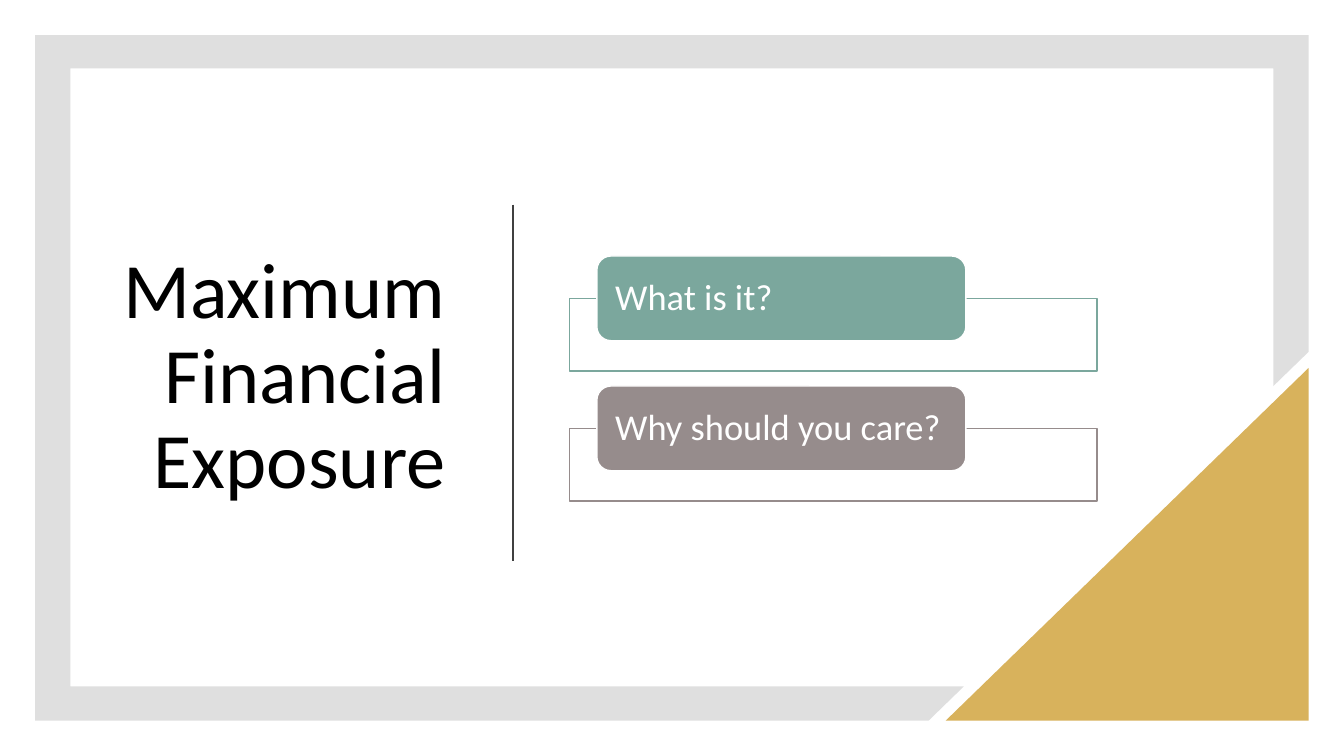
from lxml.etree import SubElement
from pptx import Presentation
from pptx.dml.color import RGBColor
from pptx.enum.shapes import MSO_CONNECTOR, MSO_SHAPE
from pptx.enum.text import MSO_ANCHOR, MSO_AUTO_SIZE, PP_ALIGN
from pptx.oxml.ns import qn
from pptx.util import Inches, Pt

WHITE = RGBColor(0xFF, 0xFF, 0xFF)
BLACK = RGBColor(0x00, 0x00, 0x00)
GRAY = RGBColor(0x80, 0x80, 0x80)
DARK = RGBColor(0x40, 0x40, 0x40)
GOLD = RGBColor(0xD8, 0xB2, 0x5C)
GREEN = RGBColor(0x7B, 0xA7, 0x9D)
TAUPE = RGBColor(0x96, 0x8C, 0x8C)

FRAME = [(0.35, 0.35), (12.98, 0.35), (12.98, 3.49), (12.63, 3.83),
         (12.63, 0.68), (0.7, 0.68), (0.7, 6.81), (9.56, 6.81),
         (9.21, 7.15), (0.35, 7.15)]
TOPICS = [("What is it?", GREEN), ("Why should you care?", TAUPE)]
TOP, STEP = 2.54, 1.29


class Board:
    font = "Calibri"

    def __init__(self, slide):
        self.slide = slide
        self.shapes = slide.shapes

    def paint(self, shape, fill, line=None, alpha=100):
        """Set fill, its opacity in percent, and outline."""
        shape.shadow.inherit = False
        shape.fill.solid()
        shape.fill.fore_color.rgb = fill
        if alpha < 100:
            color = shape.element.spPr.find(qn("a:solidFill"))[0]
            SubElement(color, qn("a:alpha"), val=str(alpha * 1000))
        if line is None:
            shape.line.fill.background()
        else:
            shape.line.color.rgb = line
            shape.line.width = Pt(1)

    def label(self, shape, text, size, color, align, inset):
        frame = shape.text_frame
        frame.text = text
        frame.word_wrap = True
        frame.auto_size = MSO_AUTO_SIZE.NONE
        frame.vertical_anchor = MSO_ANCHOR.MIDDLE
        frame.margin_left = frame.margin_right = Inches(inset)
        line = frame.paragraphs[0]
        line.alignment = align
        line.line_spacing = 0.9
        line.font.name = self.font
        line.font.size = Pt(size)
        line.font.color.rgb = color

    def shape(self, kind, box, fill, line=None, alpha=100):
        shape = self.shapes.add_shape(kind, *map(Inches, box))
        self.paint(shape, fill, line, alpha)
        return shape

    def outline(self, points, fill, alpha):
        start, *rest = [(Inches(x), Inches(y)) for x, y in points]
        build = self.shapes.build_freeform(*start)
        build.add_line_segments(rest)
        self.paint(build.convert_to_shape(), fill, alpha=alpha)

    def corner(self, box, fill):
        """Draw a right triangle with its square corner at the lower right."""
        shape = self.shape(MSO_SHAPE.RIGHT_TRIANGLE, box, fill)
        shape.element.spPr.find(qn("a:xfrm")).set("flipH", "1")

    def title(self, text, box):
        title = self.shapes.title
        title.left, title.top, title.width, title.height = map(Inches, box)
        self.label(title, text, 56, BLACK, PP_ALIGN.RIGHT, 0.1)

    def rule(self, ends, color):
        line = self.shapes.add_connector(
            MSO_CONNECTOR.STRAIGHT, *map(Inches, ends))
        line.line.color.rgb = color
        line.line.width = Pt(1.5)
        SubElement(line.element.spPr, qn("a:effectLst"))

    def topic(self, text, top, color):
        """Draw a colored tab over an outlined panel."""
        self.shape(MSO_SHAPE.RECTANGLE, (5.65, top + 0.42, 5.23, 0.72),
                   WHITE, color, 90)
        tab = self.shape(MSO_SHAPE.ROUNDED_RECTANGLE,
                         (5.92, top, 3.66, 0.84), color, WHITE)
        self.label(tab, text, 26, WHITE, PP_ALIGN.LEFT, 0.14)


def main():
    deck = Presentation()
    deck.slide_width, deck.slide_height = Inches(13.33), Inches(7.5)
    board = Board(deck.slides.add_slide(deck.slide_layouts[5]))
    board.outline(FRAME, GRAY, 25)
    board.corner((9.38, 3.65, 3.6, 3.5), GOLD)
    board.title("Maximum Financial Exposure", (1.1, 1.3, 3.42, 4.9))
    board.rule((5.09, 2.03, 5.09, 5.57), DARK)
    for row, (text, color) in enumerate(TOPICS):
        board.topic(text, TOP + row * STEP, color)
    deck.save("out.pptx")


if __name__ == "__main__":
    main()
